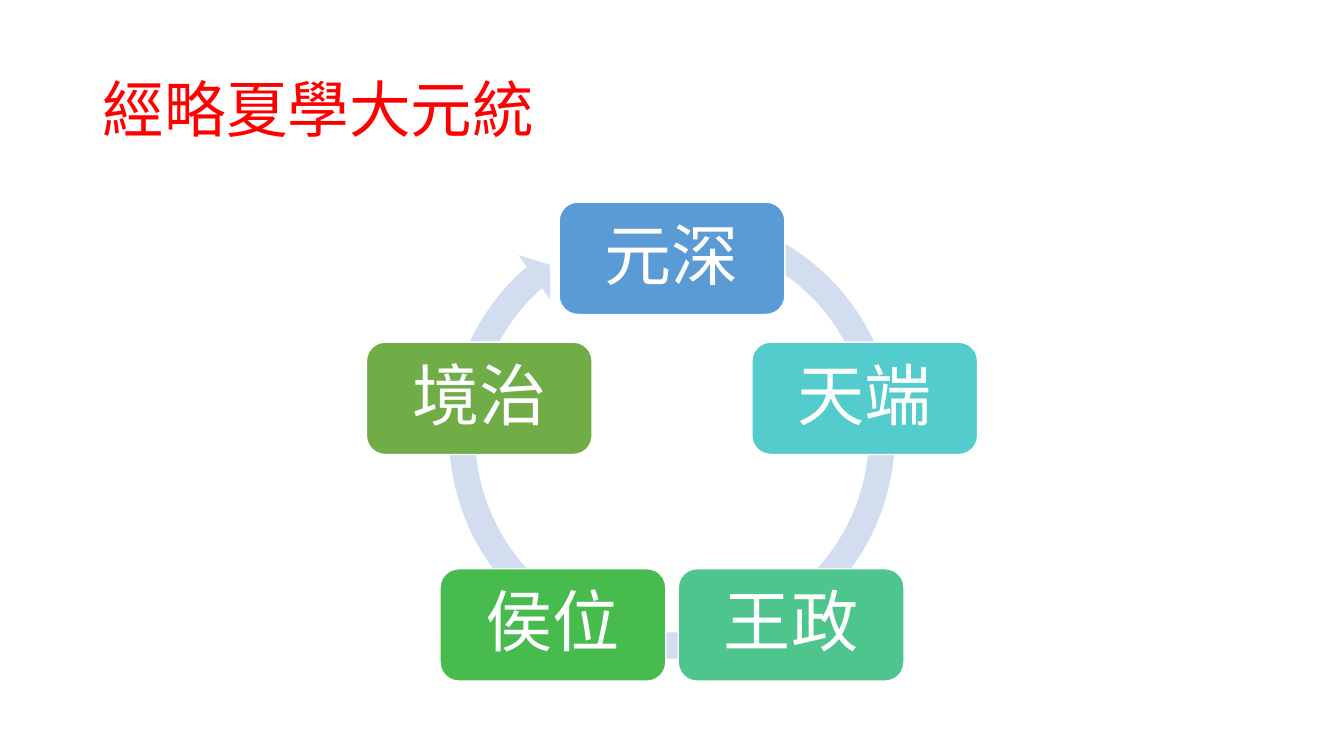
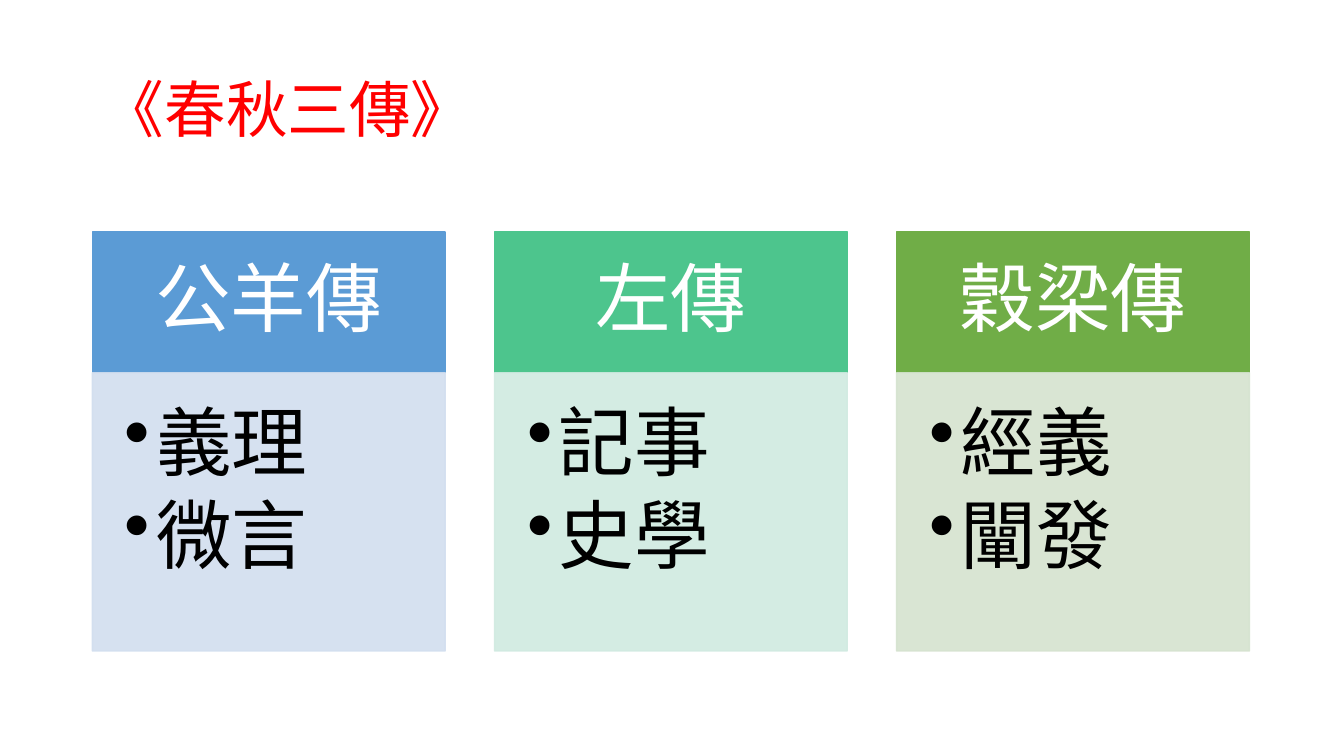
import math
from dataclasses import dataclass

import lxml.etree
import pptx
import pptx.dml.color
import pptx.enum.shapes
import pptx.enum.text
import pptx.oxml.ns
import pptx.util

PX = 9525
Shape = pptx.enum.shapes.MSO_SHAPE
Anchor = pptx.enum.text.MSO_ANCHOR
Align = pptx.enum.text.PP_ALIGN


@dataclass(frozen=True)
class Theme:
    font: str = "Noto Sans CJK SC"
    title: str = "FF0000"
    light: str = "FFFFFF"
    dark: str = "000000"
    ring: str = "D2DEEF"
    blue: str = "5B9BD5"
    cyan: str = "54CCCD"
    teal: str = "4DC58D"
    green: str = "48BB4F"
    olive: str = "70AD47"
    pale_blue: str = "D2DEEF"
    pale_teal: str = "D0EAE1"
    pale_olive: str = "D5E3CF"
    title_size: int = 44
    node_size: int = 48
    column_size: int = 54


theme = Theme()


def add_box(page, kind, place, fill=None, line=None):
    box = page.shapes.add_shape(kind, *[round(length * PX) for length in place])
    box.shadow.inherit = False
    if fill:
        box.fill.solid()
        box.fill.fore_color.rgb = pptx.dml.color.RGBColor.from_string(fill)
    else:
        box.fill.background()
    if line:
        box.line.color.rgb = pptx.dml.color.RGBColor.from_string(line)
        box.line.width = pptx.util.Pt(1)
    else:
        box.line.fill.background()
    return box


def write(box, lines, size, color, insets, anchor=Anchor.MIDDLE, align=Align.CENTER, after=0):
    frame = box.text_frame
    frame.word_wrap = True
    frame.vertical_anchor = anchor
    frame.margin_left, frame.margin_top, frame.margin_right, frame.margin_bottom = [
        inset * PX for inset in insets
    ]
    frame.text = "\n".join(lines)
    for para in frame.paragraphs:
        para.alignment = align
        para.line_spacing = 0.9
        para.space_after = pptx.util.Pt(after)
        para.font.name = theme.font
        para.font.size = pptx.util.Pt(size)
        para.font.color.rgb = pptx.dml.color.RGBColor.from_string(color)


deck = pptx.Presentation()
deck.slide_width = 1280 * PX
deck.slide_height = 720 * PX

pages = []
for title in ("經略夏學大元統", "《春秋三傳》"):
    page = deck.slides.add_slide(deck.slide_layouts[6])
    box = page.shapes.add_textbox(88 * PX, 38 * PX, 1104 * PX, 139 * PX)
    write(box, [title], theme.title_size, theme.title, (10, 5, 10, 5), align=Align.LEFT)
    pages.append(page)
cycle_page, columns_page = pages

ring = add_box(cycle_page, Shape.CIRCULAR_ARROW, (414, 189, 452, 452), theme.ring)
degree = 60000 / 100000
for index, value in enumerate((5.5 / 100, 5.5 * degree, 229 * degree, 290 * degree, 5.8 / 100)):
    ring.adjustments[index] = value

nodes = [
    ("元深", theme.blue),
    ("天端", theme.cyan),
    ("王政", theme.teal),
    ("侯位", theme.green),
    ("境治", theme.olive),
]
center_x, center_y, radius = 640, 439, 193
node_width, node_height = 215, 107
for index, (name, color) in enumerate(nodes):
    angle = math.tau * index / len(nodes)
    left = center_x + radius * math.sin(angle) - node_width / 2
    top = center_y - radius * math.cos(angle) - node_height / 2
    place = (left, top, node_width, node_height)
    node = add_box(cycle_page, Shape.ROUNDED_RECTANGLE, place, color, theme.light)
    write(node, [name], theme.node_size, theme.light, (24, 24, 24, 24))

columns = [
    ("公羊傳", ("義理", "微言"), theme.blue, theme.pale_blue),
    ("左傳", ("記事", "史學"), theme.teal, theme.pale_teal),
    ("穀梁傳", ("經義", "闡發"), theme.olive, theme.pale_olive),
]
for index, (name, points, color, pale) in enumerate(columns):
    left = 88 + 383 * index
    header = add_box(columns_page, Shape.RECTANGLE, (left, 221, 336, 134), color, color)
    write(header, [name], theme.column_size, theme.light, (40, 23, 40, 23))

    body = add_box(columns_page, Shape.RECTANGLE, (left, 355, 336, 265), pale, pale)
    for tint in body.fill._xPr.iter(pptx.oxml.ns.qn("a:srgbClr")):
        lxml.etree.SubElement(tint, pptx.oxml.ns.qn("a:alpha"), val="90000")
    write(body, points, theme.column_size, theme.dark, (31, 31, 40, 45), Anchor.TOP, Align.LEFT, 8)
    for para in body.text_frame.paragraphs:
        properties = para._p.get_or_add_pPr()
        properties.set("marL", str(30 * PX))
        properties.set("indent", str(-30 * PX))
        bullet = lxml.etree.Element(pptx.oxml.ns.qn("a:buChar"), char="•")
        properties.find(pptx.oxml.ns.qn("a:defRPr")).addprevious(bullet)

deck.save("out.pptx")
